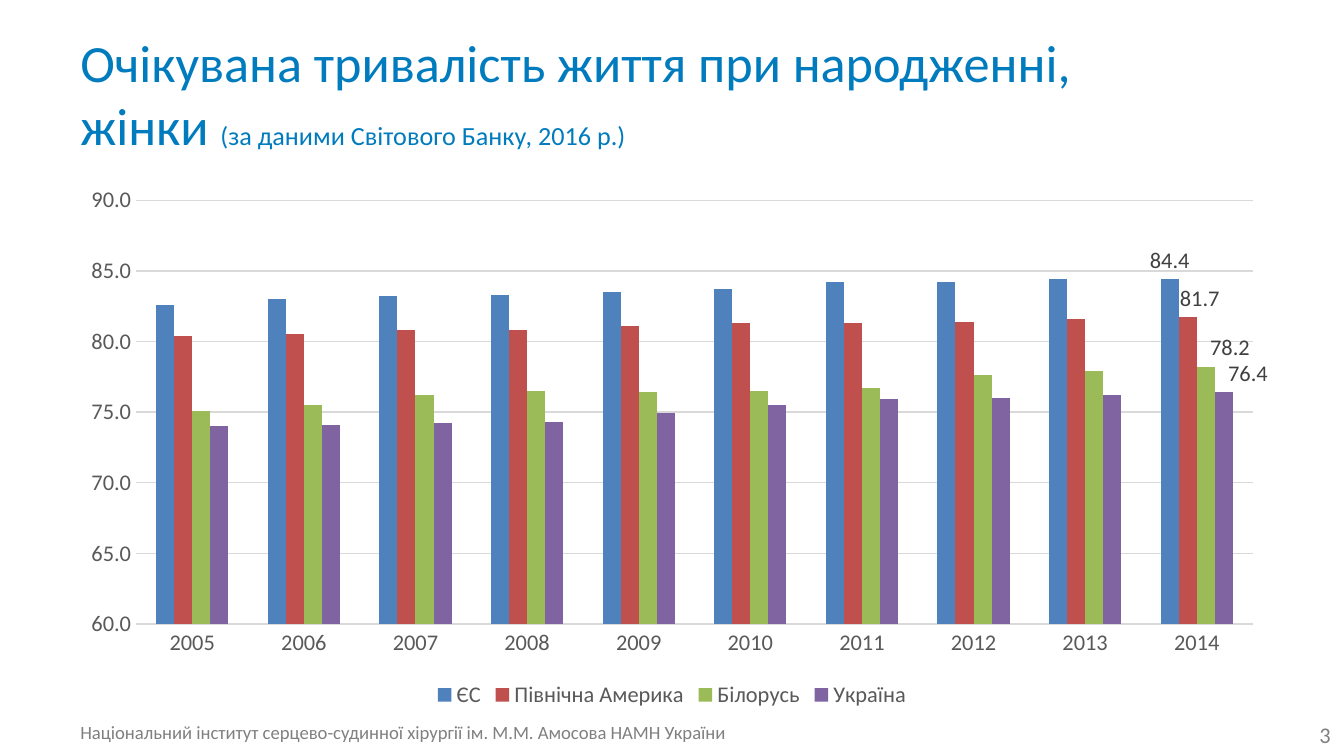
from dataclasses import dataclass

from pptx import Presentation
from pptx.chart.data import CategoryChartData as Data
from pptx.dml.color import RGBColor as Rgb
from pptx.enum.chart import XL_CHART_TYPE as Kind
from pptx.enum.chart import XL_LABEL_POSITION as Spot
from pptx.enum.chart import XL_LEGEND_POSITION as Side
from pptx.enum.chart import XL_TICK_MARK as Tick
from pptx.enum.text import MSO_ANCHOR as Anchor
from pptx.enum.text import PP_ALIGN as Align
from pptx.oxml import parse_xml
from pptx.oxml.ns import nsdecls
from pptx.util import Cm, Pt


@dataclass(frozen=True)
class Theme:
    face: str = "Calibri"
    title: str = "007BBE"
    muted: str = "808080"
    axis: str = "595959"
    label: str = "404040"
    grid: str = "D9D9D9"
    big: int = 28
    sub: int = 14
    body: int = 12
    small: int = 10


theme = Theme()


def style(font, size, color):
    font.name = theme.face
    font.size = Pt(size)
    font.color.rgb = Rgb.from_string(color)


def add_text(slide, box, parts, color, anchor=Anchor.TOP, align=Align.LEFT):
    """Add a wrapped one-paragraph box; parts are (words, size) pairs."""
    frame = slide.shapes.add_textbox(*map(Cm, box)).text_frame
    frame.word_wrap = True
    frame.vertical_anchor = anchor
    para = frame.paragraphs[0]
    para.alignment = align
    for words, size in parts:
        run = para.add_run()
        run.text = words
        style(run.font, size, color)


deck = Presentation()
deck.slide_width, deck.slide_height = Cm(25.4), Cm(14.29)
slide = deck.slides.add_slide(deck.slide_layouts[6])

# Title, footer and page number
add_text(slide, (1.27, 0.58, 20.96, 2.37),
         [("Очікувана тривалість життя при народженні, жінки ", theme.big),
          ("(за даними Світового Банку, 2016 р.)", theme.sub)],
         theme.title, Anchor.MIDDLE)
add_text(slide, (1.27, 13.51, 13.54, 0.69),
         [("Національний інститут серцево-судинної хірургії "
           "ім. М.М. Амосова НАМН України", theme.small)], theme.muted)
add_text(slide, (19.48, 13.51, 5.92, 0.76), [("3", theme.body)],
         theme.muted, Anchor.MIDDLE, Align.RIGHT)

# Life expectancy by region; shift moves the last label right, in chart widths
regions = [
    ("ЄС", "4F81BD", 0,
     (82.6, 83.0, 83.2, 83.3, 83.5, 83.7, 84.2, 84.2, 84.4, 84.4)),
    ("Північна Америка", "C0504D", 0.01,
     (80.4, 80.5, 80.8, 80.8, 81.1, 81.3, 81.3, 81.4, 81.6, 81.7)),
    ("Білорусь", "9BBB59", 0.02,
     (75.1, 75.5, 76.2, 76.5, 76.4, 76.5, 76.7, 77.6, 77.9, 78.2)),
    ("Україна", "8064A2", 0.02,
     (74.0, 74.1, 74.2, 74.3, 74.9, 75.5, 75.9, 76.0, 76.2, 76.4)),
]
data = Data(number_format="0.0")
data.categories = [str(year) for year in range(2005, 2015)]
for name, color, shift, values in regions:
    data.add_series(name, values)
chart = slide.shapes.add_chart(
    Kind.COLUMN_CLUSTERED, Cm(1.27), Cm(3.33), Cm(22.86), Cm(10.16), data
).chart
chart.has_title = False
style(chart.font, theme.body, theme.axis)

plot = chart.plots[0]
plot.gap_width = 219
plot.overlap = 0
plot.vary_by_categories = False
for series, (name, color, shift, values) in zip(plot.series, regions):
    series.format.fill.solid()
    series.format.fill.fore_color.rgb = Rgb.from_string(color)
    series.invert_if_negative = False
    series.data_labels.show_value = False
    label = series.points[len(values) - 1].data_label
    style(label.font, theme.body, theme.label)
    label.position = Spot.OUTSIDE_END
    if shift:
        index = series._element.xpath("c:dLbls/c:dLbl/c:idx")[0]
        index.addnext(parse_xml(
            f'<c:layout {nsdecls("c")}><c:manualLayout>'
            f'<c:x val="{shift}"/><c:y val="0"/>'
            '</c:manualLayout></c:layout>'))

years, ages = chart.category_axis, chart.value_axis
for axis in (years, ages):
    axis.major_tick_mark = axis.minor_tick_mark = Tick.NONE
    style(axis.tick_labels.font, theme.body, theme.axis)
ages.minimum_scale, ages.maximum_scale, ages.major_unit = 60, 90, 5
ages.tick_labels.number_format = "0.0"
ages.tick_labels.number_format_is_linked = False
ages.format.line.fill.background()
for line in (years.format.line, ages.major_gridlines.format.line):
    line.width = Pt(0.75)
    line.color.rgb = Rgb.from_string(theme.grid)

chart.has_legend = True
chart.legend.position = Side.BOTTOM
chart.legend.include_in_layout = False
style(chart.legend.font, theme.body, theme.axis)

deck.save("out.pptx")
